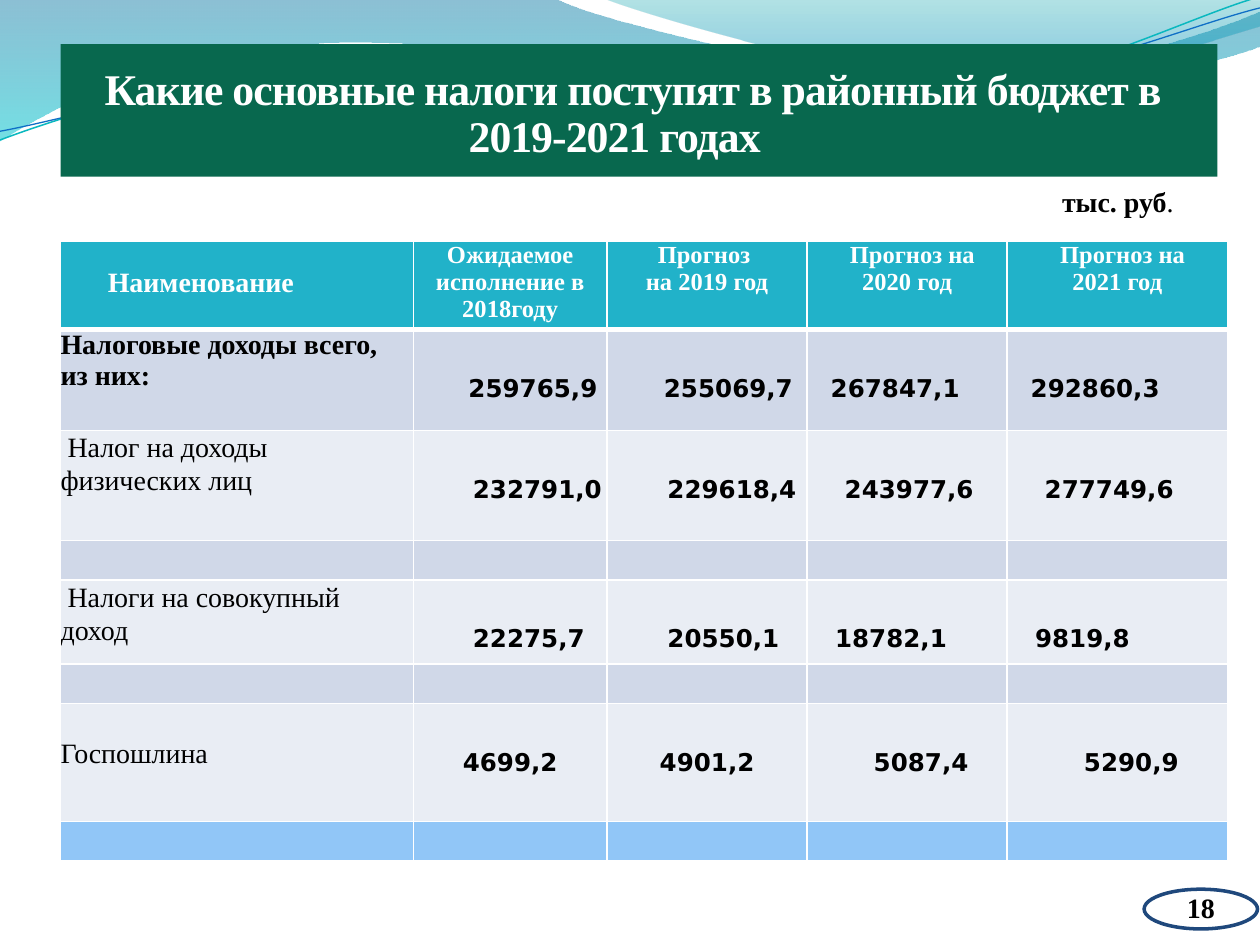
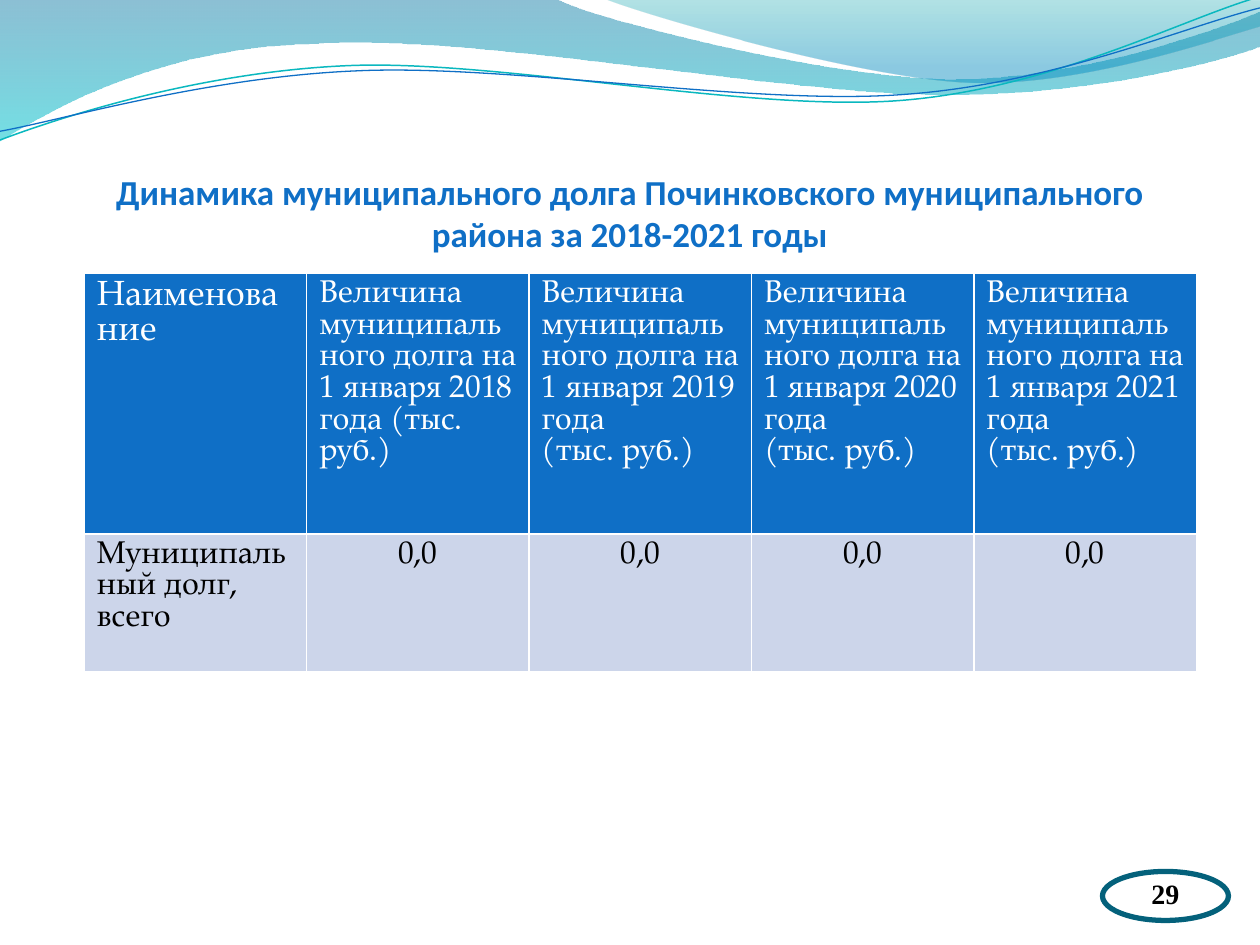
from lxml.etree import SubElement as Sub
from pptx import Presentation
from pptx.dml.color import RGBColor as Rgb
from pptx.enum.shapes import MSO_SHAPE as Kind
from pptx.enum.text import MSO_ANCHOR as Anchor, MSO_AUTO_SIZE as Auto, PP_ALIGN as Align
from pptx.oxml.ns import qn
from pptx.util import Pt

HUES = {
    "white": "FFFFFF", "black": "000000", "band": "08684E", "blue": "0F6FC6",
    "teal": "0AB8BF", "head": "21B2C9", "odd": "D0D8E8", "even": "E9EDF4",
    "last": "91C6F7", "debt": "CCD5EA", "navy": "1F487C", "ring": "04617B",
}
TIMES, SANS, PAGELLA = "Times New Roman", "DejaVu Sans", "TeX Gyre Pagella"
FINE = 100

WAVES = [
    ((0, 0), [
        [(317, -1)],
        [(343, 12), (478, 45), (546, 45)],
        [(614, 45), (690, 19), (720, 6.5)],
        [(721, 26)],
        [(708, 32), (626, 55), (537, 54)],
        [(448, 54), (275, 20), (185, 24.5)],
        [(93, 26), (33, 60), (-1, 81)],
    ], [(0, "0074A1", 45), (1, "00C6CF", 55)]),
    ((345, -1), [
        [(366.5, 8), (491, 44.5), (553.5, 47)],
        [(616.5, 49.5), (692, 23), (720, 15)],
        [(720, 0)],
    ], [(0, "00A1A9", 30), (0.8, "008BBF", 45)]),
]
CURLS = [
    ((0, 80), [
        [(34.5, 67), (114, 41), (199.5, 37.5)],
        [(284.5, 34), (427, 64), (513.5, 57.5)],
        [(600, 51), (675.5, 11), (718.5, -1.5)],
    ], "teal", 0.85),
    ((0, 75), [
        [(34, 69), (118, 44), (204, 40.5)],
        [(290, 36.5), (430, 60.5), (516, 54)],
        [(602, 48), (677.5, 15), (720, 4.5)],
    ], "blue", 0.75),
]


def tint(name):
    return Rgb.from_string(HUES[name])


def pts(box):
    return [Pt(n) for n in box]


def put(item, **vals):
    for key, val in vals.items():
        setattr(item, key, val)


def pad(item, left=0, top=0, right=0, bottom=0):
    put(item, margin_left=Pt(left), margin_top=Pt(top),
        margin_right=Pt(right), margin_bottom=Pt(bottom))


def paint(shape, fill=None, line=None, width=1):
    shape.shadow.inherit = False
    if fill:
        shape.fill.solid()
        shape.fill.fore_color.rgb = tint(fill)
    else:
        shape.fill.background()
    if line:
        shape.line.color.rgb = tint(line)
        shape.line.width = Pt(width)
    else:
        shape.line.fill.background()


def style(run, size, face=TIMES, hue="black", bold=False):
    put(run.font, size=Pt(size), name=face, bold=bold)
    run.font.color.rgb = tint(hue)


def write(frame, text, look, align=Align.LEFT, space=None, dent=None):
    frame.text = text
    for para in frame.paragraphs:
        put(para, alignment=align, line_spacing=Pt(space) if space else None)
        if dent:
            props = para._p.get_or_add_pPr()
            for key, val in zip(("marL", "indent", "marR"), dent):
                props.set(key, str(Pt(val)))
        for run in para.runs:
            style(run, **look)


def draw(slide, start, parts, close):
    knots = [start] + [part[-1] for part in parts]
    fine = [(x * FINE, y * FINE) for x, y in knots]
    pen = slide.shapes.build_freeform(*fine[0], scale=Pt(1) / FINE)
    pen.add_line_segments(fine[1:], close=close)
    shape = pen.convert_to_shape()
    left, top = (min(axis) for axis in zip(*fine))
    for node, part in zip(list(shape.element.iter(qn("a:lnTo"))), parts):
        if len(part) == 3:
            node.clear()
            bend = Sub(node.getparent(), qn("a:cubicBezTo"))
            for x, y in part:
                Sub(bend, qn("a:pt"), x=str(round(x * FINE - left)),
                    y=str(round(y * FINE - top)))
            node.getparent().replace(node, bend)
    return shape


def dress(deck, slide):
    made = []
    for start, parts, stops in WAVES:
        wave = draw(slide, start, parts, True)
        paint(wave)
        wave.fill.gradient()
        wave.fill.gradient_angle = 270
        for stop, (place, code, _) in zip(wave.fill.gradient_stops, stops):
            stop.color.rgb = Rgb.from_string(code)
            stop.position = place
        for node, (_, _, alpha) in zip(wave.element.spPr.iter(qn("a:srgbClr")), stops):
            Sub(node, qn("a:alpha")).set("val", str(alpha * 1000))
        made.append(wave)
    for start, parts, hue, width in CURLS:
        curl = draw(slide, start, parts, False)
        paint(curl, line=hue, width=width)
        made.append(curl)
    for shape in made:
        deck.slide_master.shapes.element.append(shape.element)


def title(slide, box, text, look, top, **form):
    head = slide.shapes.title
    put(head, **dict(zip(("left", "top", "width", "height"), pts(box))))
    frame = head.text_frame
    put(frame, vertical_anchor=Anchor.BOTTOM, word_wrap=True, auto_size=Auto.NONE)
    pad(frame, top=top)
    write(frame, text, look, **form)
    return head


def badge(slide, box, number, hue, width, lift):
    oval = slide.shapes.add_shape(Kind.OVAL, *pts(box))
    paint(oval, "white", hue, width)
    frame = oval.text_frame
    put(frame, vertical_anchor=Anchor.TOP, word_wrap=False)
    pad(frame, top=-lift)
    write(frame, number, dict(size=16, bold=True), Align.CENTER)


def edge(cell, sides):
    props = cell._tc.get_or_add_tcPr()
    for side in "LRTB":
        line = Sub(props, qn("a:ln" + side), w=str(Pt(sides.get(side, 1))))
        Sub(Sub(line, qn("a:solidFill")), qn("a:srgbClr"), val=HUES["white"])


def grid(slide, left, top, cols, rows, fills, thick=None):
    frame = slide.shapes.add_table(len(rows), len(cols),
                                   *pts((left, top, sum(cols), sum(rows))))
    table = frame.table
    for col, width in zip(table.columns, cols):
        col.width = Pt(width)
    for row, (line, height) in enumerate(zip(table.rows, rows)):
        line.height = Pt(height)
        for cell in line.cells:
            edge(cell, (thick or {}).get(row, {}))
            cell.fill.solid()
            cell.fill.fore_color.rgb = tint(fills[row])
    return table


def taxes(slide, left, top):
    table = grid(slide, left, top, [201.6, 110.7, 114.3, 114.3, 126],
                 [50.4, 57.6, 63, 22.4, 48.2, 22.5, 67.5, 22.4],
                 ["head"] + ["odd", "even"] * 3 + ["last"], {0: {"B": 3}, 1: {"T": 3}})
    for cell in table.iter_cells():
        pad(cell)
    heads = [
        ("Наименование", None), ("Ожидаемое исполнение в 2018году", (11.5, 0, 11.5)),
        ("Прогноз \nна 2019 год", None), ("Прогноз на 2020 год", (13, 6, 13)),
        ("Прогноз на 2021 год", (13, 6, 13)),
    ]
    for col, (text, dent) in enumerate(heads):
        cell = table.cell(0, col)
        first = col == 0
        if first:
            pad(cell, left=27, top=15)
        write(cell.text_frame, text,
              dict(size=16 if first else 14, hue="white", bold=True),
              Align.LEFT if first else Align.CENTER, dent=dent)
    side, mid = Align.LEFT, Align.CENTER
    body = [
        (1, "Налоговые доходы всего, из них:", side, (31.5, 32.5, 13.5, 13.5),
         ("259765,9", "255069,7", "267847,1", "292860,3")),
        (2, " Налог на доходы физических лиц", side, (34, 34.5, 21.5, 21.5),
         ("232791,0", "229618,4", "243977,6", "277749,6")),
        (4, " Налоги на совокупный доход", side, (34, 34.5, 16, 16),
         ("22275,7", "20550,1", "18782,1", "9819,8")),
        (6, "Госпошлина", mid, (0, 0, 16, 16),
         ("4699,2", "4901,2", "5087,4", "5290,9")),
    ]
    for row, name, align, shifts, sums in body:
        total = row == 1
        cell = table.cell(row, 0)
        pad(cell, top=19 if row == 6 else 0, right=20 if total else 0)
        write(cell.text_frame, name, dict(size=16, bold=total), space=None if total else 19)
        for col, (shift, text) in enumerate(zip(shifts, sums), 1):
            cell = table.cell(row, col)
            pad(cell, left=shift, top=21.1)
            write(cell.text_frame, text, dict(size=14, face=SANS, bold=True), align, 21.1)


def debt(slide, left, top):
    table = grid(slide, left, top, [127.1] * 5, [149, 78.5], ["blue", "debt"])
    heads = ["Наименование"]
    for year in range(2018, 2022):
        gap = " " if year == 2018 else "\n"
        heads.append(f"Величина муниципального долга на 1 января {year} года{gap}(тыс. руб.)")
    rows = [heads, ["Муниципальный долг, всего"] + ["0,0"] * 4]
    for row, texts in enumerate(rows):
        for col, text in enumerate(texts):
            look = dict(size=18 if row or col else 20, face=PAGELLA,
                        hue="black" if row else "white")
            write(table.cell(row, col).text_frame, text, look,
                  Align.CENTER if row and col else Align.LEFT)


def unit(slide, box):
    frame = slide.shapes.add_textbox(*pts(box)).text_frame
    frame.word_wrap = True
    for text, bold in (("тыс. руб", True), (".", False)):
        run = frame.paragraphs[0].add_run()
        run.text = text
        style(run, 16, bold=bold)


def income(slide):
    band = slide.shapes.add_shape(Kind.RECTANGLE, *pts((34.6, 25.2, 661, 75.8)))
    paint(band, "band")
    slide.shapes.element.insert(2, band.element)
    head = title(slide, (43.2, 18, 633.6, 74.2),
                 "Какие основные налоги поступят в районный бюджет в 2019-2021 годах",
                 dict(size=25, hue="white", bold=True), 19.4,
                 space=27, dent=(224.6, -208))
    for props in head.element.iter(qn("a:rPr")):
        props.set("spc", "-55")
    badge(slide, (653.8, 508.1, 64.8, 22.7), "18", "navy", 2, 2.5)
    taxes(slide, 34.6, 138)
    unit(slide, (599.8, 102.2, 95.8, 26.6))


def owed(slide):
    title(slide, (36, 55.4, 648, 90),
          "Динамика муниципального долга Починковского муниципального района за 2018-2021 годы",
          dict(size=20, face="Calibri", hue="blue", bold=True), 3.6, align=Align.CENTER)
    debt(slide, 48.2, 156.2)
    badge(slide, (630, 498, 72, 28), "29", "ring", 3, 1.2)


def main():
    deck = Presentation()
    put(deck, slide_width=Pt(720), slide_height=Pt(540))
    first, second = [deck.slides.add_slide(deck.slide_layouts[5]) for _ in range(2)]
    dress(deck, first)
    income(first)
    owed(second)
    deck.save("out.pptx")


if __name__ == "__main__":
    main()
